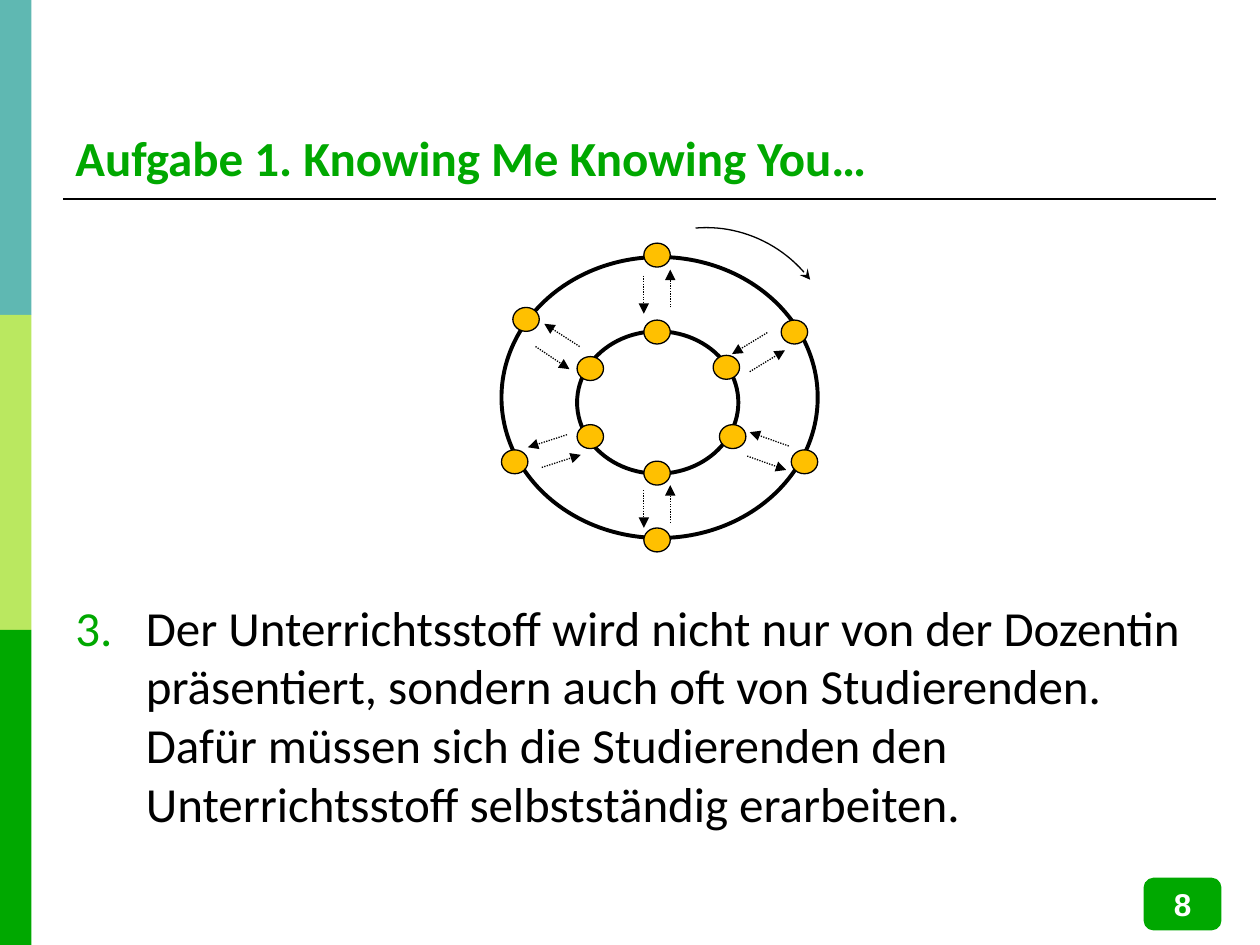
from lxml.etree import SubElement
from pptx import Presentation
from pptx.dml.color import RGBColor
from pptx.enum.dml import MSO_LINE
from pptx.enum.shapes import MSO_CONNECTOR, MSO_SHAPE
from pptx.enum.text import MSO_ANCHOR, PP_ALIGN
from pptx.oxml.ns import qn
from pptx.util import Emu, Pt

THEME = {
    "green": "00A800", "lime": "BAE860", "teal": "5FB8B2",
    "gold": "FFC000", "black": "000000", "white": "FFFFFF",
    "text": Pt(28), "page": Pt(18), "face": "Calibri", "num": "Arial",
}
SCALE = 9144

TITLE = "Aufgabe 1. Knowing Me Knowing You…"
BODY = ("Der Unterrichtsstoff wird nicht nur von der Dozentin präsentiert, "
        "sondern auch oft von Studierenden. Dafür müssen sich die Studierenden "
        "den Unterrichtsstoff selbstständig erarbeiten.")
PAGE = "8"
START = 3

BANDS = ["teal", "lime", "green"]
RINGS = [(398, 204, 251, 223), (458, 263, 128, 113)]
DOTS = [
    (511, 193), (511, 254), (407, 244), (458, 283), (398, 357), (458, 337),
    (511, 419), (511, 366), (620, 254), (566, 282), (628, 357), (571, 337),
]
ARROWS = [
    (511, 219, 511, 249), (532, 244, 532, 214),
    (511, 389, 511, 419), (532, 415, 532, 385),
    (460, 275, 432, 257), (425, 275, 452, 293),
    (450, 345, 419, 355), (430, 371, 461, 361),
    (609, 264, 581, 281), (595, 295, 623, 278),
    (626, 354, 595, 343), (593, 362, 624, 373),
]
CURVE = [(643, 222), (621, 193), (586, 178), (552, 181)]
STEPS = 24


def px(val):
    return Emu(round(val * SCALE))


def tint(name):
    return RGBColor.from_string(THEME[name])


def apply(obj, form):
    for key, val in form.items():
        setattr(obj, key, val)


def stroke(item, name, width):
    item.line.color.rgb = tint(name)
    item.line.width = Pt(width)


def tip(item, end, kind):
    SubElement(item.line._get_or_add_ln(), qn(f"a:{end}"), type=kind)


def block(host, kind, spot, fill, edge=None, width=0.75):
    item = host.add_shape(kind, *map(px, spot))
    item.shadow.inherit = False
    item.fill.solid()
    item.fill.fore_color.rgb = tint(fill)
    if edge:
        stroke(item, edge, width)
    else:
        item.line.fill.background()
    return item


def link(host, ends, width):
    item = host.add_connector(MSO_CONNECTOR.STRAIGHT, *map(px, ends))
    stroke(item, "black", width)
    SubElement(item._element.spPr, qn("a:effectLst"))
    return item


def write(item, text, color, font, anchor, align=PP_ALIGN.LEFT):
    apply(item.text_frame, {"word_wrap": True, "vertical_anchor": anchor})
    para = item.text_frame.paragraphs[0]
    para.alignment = align
    run = para.add_run()
    run.text = text
    apply(run.font, font)
    run.font.color.rgb = tint(color)
    return para


def number(para):
    props = para._p.get_or_add_pPr()
    apply_to = {"marL": px(56), "indent": px(-56)}
    for key, val in apply_to.items():
        props.set(key, str(val))
    shade = SubElement(props, qn("a:buClr"))
    SubElement(shade, qn("a:srgbClr"), val=THEME["green"])
    SubElement(props, qn("a:buAutoNum"), type="arabicPeriod", startAt=str(START))


def bezier(step):
    t = step / STEPS
    parts = [(1 - t) ** 3, 3 * t * (1 - t) ** 2, 3 * t * t * (1 - t), t ** 3]
    return tuple(px(sum(p * c for p, c in zip(parts, axis))) for axis in zip(*CURVE))


def frame(shapes):
    for row, name in enumerate(BANDS):
        block(shapes, MSO_SHAPE.RECTANGLE, (0, 250 * row, 25, 250), name)
    link(shapes, (50, 158, 965, 158), 1.5)
    tile = block(shapes, MSO_SHAPE.ROUNDED_RECTANGLE, (909, 698, 59, 39),
                 "green", "green", 2)
    font = {"size": THEME["page"], "name": THEME["num"], "bold": True}
    write(tile, PAGE, "white", font, MSO_ANCHOR.MIDDLE, PP_ALIGN.CENTER)


def words(shapes):
    font = {"size": THEME["text"], "name": THEME["face"]}
    head = shapes.add_textbox(*map(px, (50, 28, 915, 125)))
    write(head, TITLE, "green", {**font, "bold": True}, MSO_ANCHOR.BOTTOM)
    body = shapes.add_textbox(*map(px, (50, 469, 915, 244)))
    number(write(body, BODY, "black", font, MSO_ANCHOR.TOP))


def circles(shapes):
    host = shapes.add_group_shape().shapes
    for ring in RINGS:
        block(host, MSO_SHAPE.OVAL, ring, "white", "black", 2.25)
    for dot in DOTS:
        block(host, MSO_SHAPE.FLOWCHART_CONNECTOR, (*dot, 21, 19), "gold", "black")
    for ends in ARROWS:
        item = link(host, ends, 0.75)
        item.line.dash_style = MSO_LINE.ROUND_DOT
        tip(item, "tailEnd", "triangle")
    points = [bezier(step) for step in range(STEPS + 1)]
    path = host.build_freeform(*points[0])
    path.add_line_segments(points[1:], close=False)
    turn = path.convert_to_shape()
    turn.shadow.inherit = False
    turn.fill.background()
    stroke(turn, "black", 0.75)
    tip(turn, "headEnd", "stealth")


def main():
    deck = Presentation()
    apply(deck, {"slide_width": px(1000), "slide_height": px(750)})
    shapes = deck.slides.add_slide(deck.slide_layouts[6]).shapes
    frame(shapes)
    words(shapes)
    circles(shapes)
    deck.save("out.pptx")


if __name__ == "__main__":
    main()
